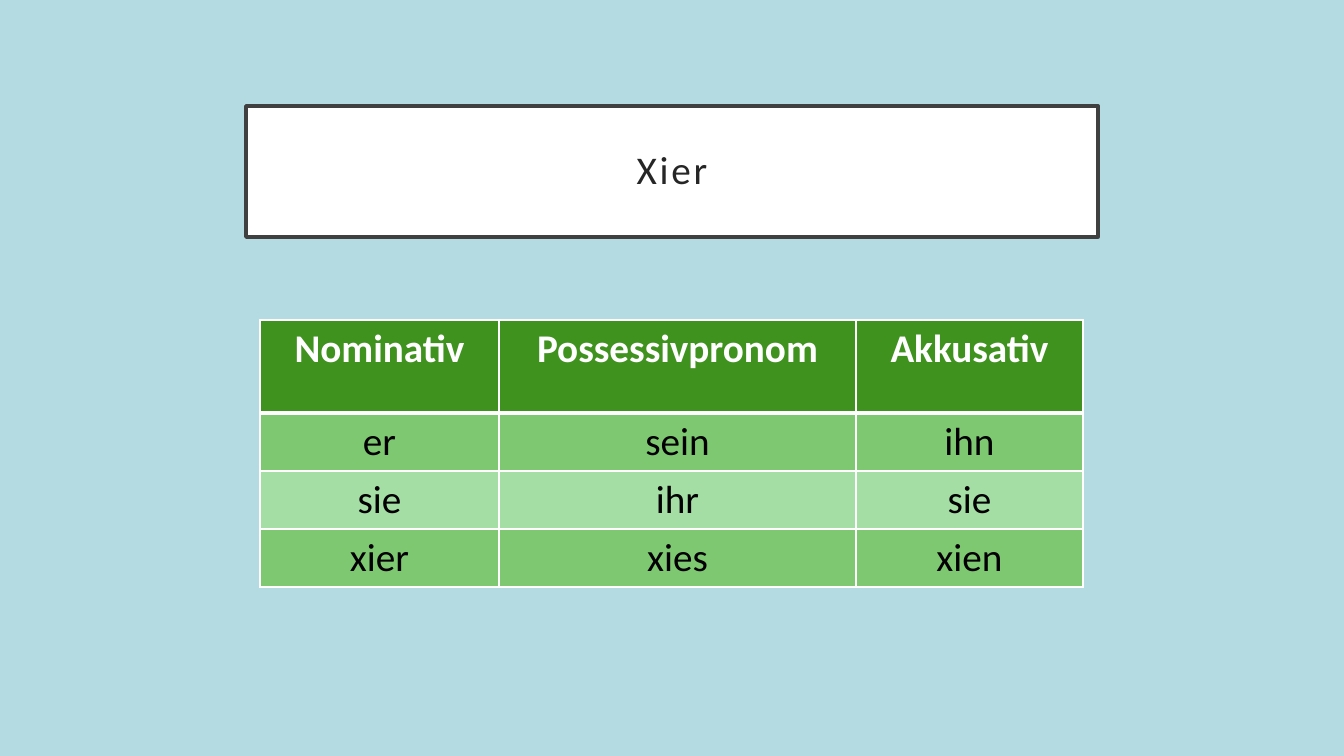
"""Build a slide with a table of German pronouns."""
from dataclasses import dataclass

from lxml import etree
from pptx import Presentation, util as u
from pptx.dml.color import RGBColor
from pptx.enum import shapes, text
from pptx.oxml import ns

SCALE = 914400 / 100.8
FONT = "Calibri"
COLORS = {
    "background": "B3DBE1", "white": "FFFFFF", "black": "000000",
    "frame": "404040", "title": "262626",
    "header": "40921F", "odd": "7FC872", "even": "A4DEA5",
}


@dataclass(frozen=True)
class Row:
    words: tuple[str, ...]
    height: int
    fill: str
    color: str = "black"
    bold: bool = False
    top: int = 1
    bottom: int = 1


COLUMNS = (239, 357, 227)
ROWS = (
    Row(("Nominativ", "Possessivpronom", "Akkusativ"), 93, "header",
        "white", bold=True, bottom=3),
    Row(("er", "sein", "ihn"), 58, "odd", top=3),
    Row(("sie", "ihr", "sie"), 58, "even"),
    Row(("xier", "xies", "xien"), 58, "odd"),
)


def px(n: int) -> u.Emu:
    return u.Emu(round(n * SCALE))


def rgb(name: str) -> RGBColor:
    return RGBColor.from_string(COLORS[name])


def paint(target, color: str) -> None:
    target.fill.solid()
    target.fill.fore_color.rgb = rgb(color)


def write(tf, words: str, color: str, bold: bool = False):
    tf.text = words
    p = tf.paragraphs[0]
    p.alignment = text.PP_ALIGN.CENTER
    r = p.runs[0]
    r.font.name, r.font.size, r.font.bold = FONT, u.Pt(28), bold
    r.font.color.rgb = rgb(color)
    return p


def add_border(cell, side: str, width: int) -> None:
    tc_pr = cell._tc.get_or_add_tcPr()
    ln = etree.SubElement(tc_pr, ns.qn(f"a:ln{side}"), w=str(u.Pt(width)))
    fill = etree.SubElement(ln, ns.qn("a:solidFill"))
    etree.SubElement(fill, ns.qn("a:srgbClr"), val=COLORS["white"])


def add_title(s) -> None:
    sp = s.shapes.add_shape(shapes.MSO_SHAPE.RECTANGLE,
                            px(246), px(106), px(852), px(131))
    sp.shadow.inherit = False
    paint(sp, "white")
    sp.line.color.rgb = rgb("frame")
    sp.line.width = u.Pt(2.5)
    tf = sp.text_frame
    tf.word_wrap = True
    tf.vertical_anchor = text.MSO_ANCHOR.MIDDLE
    tf.margin_left = tf.margin_right = u.Inches(0.2)
    tf.margin_top = tf.margin_bottom = u.Inches(0.2)
    p = write(tf, "Xier", "title")
    p.line_spacing = 0.9
    p.runs[0].font._element.set("spc", "200")


def add_pronouns(s) -> None:
    table = s.shapes.add_table(
        len(ROWS), len(COLUMNS), px(260), px(320),
        px(sum(COLUMNS)), px(sum(row.height for row in ROWS))).table
    for column, width in zip(table.columns, COLUMNS):
        column.width = px(width)
    for i, row in enumerate(ROWS):
        table.rows[i].height = px(row.height)
        borders = {"L": 1, "R": 1, "T": row.top, "B": row.bottom}
        for cell, word in zip(table.rows[i].cells, row.words):
            write(cell.text_frame, word, row.color, row.bold)
            for side, width in borders.items():
                add_border(cell, side, width)
            paint(cell, row.fill)


def main() -> None:
    prs = Presentation()
    prs.slide_width, prs.slide_height = px(1344), px(756)
    s = prs.slides.add_slide(prs.slide_layouts[6])
    paint(s.background, "background")
    add_title(s)
    add_pronouns(s)
    prs.save("out.pptx")


if __name__ == "__main__":
    main()
